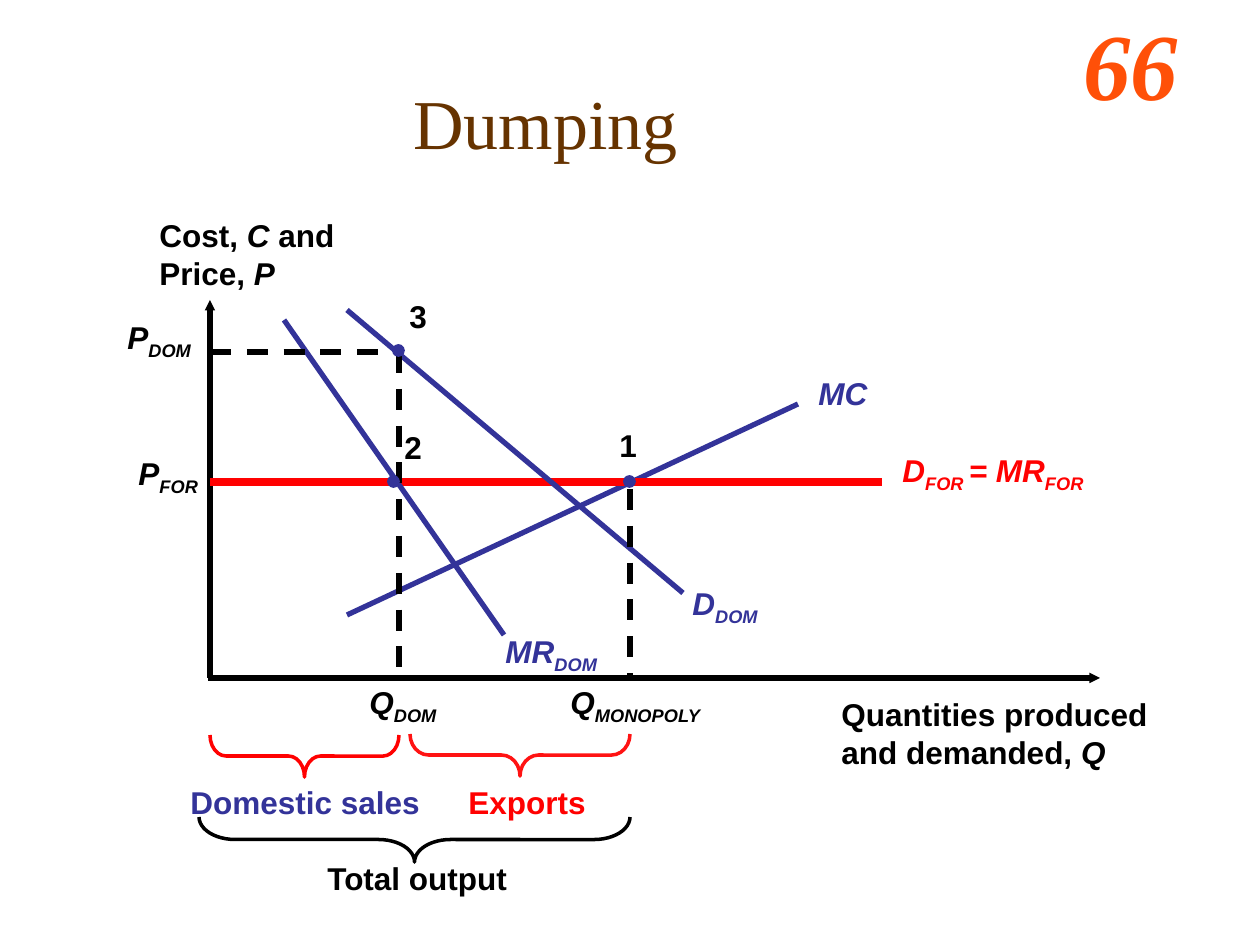
"""Builds a slide with the price and cost diagram that explains dumping."""
from pptx import Presentation
from pptx.dml.color import RGBColor
from pptx.enum.dml import MSO_LINE
from pptx.enum.shapes import MSO_CONNECTOR, MSO_SHAPE
from pptx.enum.text import MSO_ANCHOR, PP_ALIGN
from pptx.oxml.ns import qn
from pptx.util import Pt
from lxml.etree import SubElement

PX = 914400 / 126
BLACK, BLUE, RED = "000000", "333399", "FF0101"


def paint(part, color):
    part.solid()
    part.fore_color.rgb = RGBColor.from_string(color)


def write(text, left, top, width, height, color, size=18, face="Arial", bold=True):
    box = slide.shapes.add_textbox(*[round(n * PX) for n in (left, top, width, height)])
    frame = box.text_frame
    frame.word_wrap = True
    for row, line in enumerate(text.split("\n")):
        para = frame.add_paragraph() if row else frame.paragraphs[0]
        para.font.name, para.font.size, para.font.bold = face, Pt(size), bold
        paint(para.font.fill, color)
        for i, part in enumerate(line.split("*")):
            for j, bit in enumerate(part.split("_")):
                if bit:
                    run = para.add_run()
                    run.text = bit
                    if i % 2:
                        run.font.italic = True
                    if j % 2:
                        run.font._element.set("baseline", "-25000")
    return frame


deck = Presentation()
deck.slide_width, deck.slide_height = round(1260 * PX), round(945 * PX)
slide = deck.slides.add_slide(deck.slide_layouts[6])

write("*66*", 1071, 0, 179, 126, "FF5008", 54, "Times New Roman")
title = write("Dumping", 10, 42, 1071, 158, "663300", 40, "Times New Roman", False)
title.vertical_anchor = MSO_ANCHOR.MIDDLE
title.paragraphs[0].alignment = PP_ALIGN.CENTER

for start, end, top, deep, curve, color in [
    (410, 630, 734, 42, 0.44, "FF1313"),
    (210, 399, 735, 42, 0.38, RED),
    (199, 630, 817, 45, 0.8, BLACK),
]:
    span = end - start
    spot = ((start + end - deep) / 2, top + (deep - span) / 2, deep, span)
    brace = slide.shapes.add_shape(MSO_SHAPE.RIGHT_BRACE, *[round(n * PX) for n in spot])
    brace.rotation = 90
    brace.adjustments[0], brace.adjustments[1] = curve, 0.5
    brace.shadow.inherit = False
    brace.fill.background()
    paint(brace.line.fill, color)
    brace.line.width = Pt(2)

for x1, y1, x2, y2, color, width, style in [
    (210, 678, 210, 300, BLACK, 3, "arrow"),
    (208, 678, 1100, 678, BLACK, 3, "arrow"),
    (347, 615, 798, 404, BLUE, 3, "plain"),
    (210, 482, 882, 482, RED, 4.5, "plain"),
    (284, 320, 504, 635, BLUE, 3, "plain"),
    (347, 310, 683, 593, BLUE, 3, "plain"),
    (210, 352, 399, 352, BLACK, 3, "dash"),
    (399, 352, 399, 680, BLACK, 3, "dash"),
    (630, 489, 630, 678, BLACK, 3, "dash"),
]:
    ends = [round(n * PX) for n in (x1, y1, x2, y2)]
    line = slide.shapes.add_connector(MSO_CONNECTOR.STRAIGHT, *ends)
    paint(line.line.fill, color)
    line.line.width = Pt(width)
    if style == "dash":
        line.line.dash_style = MSO_LINE.DASH
    if style == "arrow":
        SubElement(line.line._get_or_add_ln(), qn("a:tailEnd"), type="triangle", w="sm", len="sm")
    SubElement(line._element.spPr, qn("a:effectLst"))

for left, top in [(388, 476), (624, 476), (393, 345)]:
    dot = slide.shapes.add_shape(MSO_SHAPE.OVAL, *[round(n * PX) for n in (left, top, 11, 11)])
    dot.shadow.inherit = False
    paint(dot.fill, BLUE)
    paint(dot.line.fill, BLUE)
    dot.line.width = Pt(1)

for text, left, top, width, color in [
    ("Exports", 456, 777, 144, RED),
    ("Domestic sales", 178, 777, 256, BLUE),
    ("Cost, *C* and\nPrice, *P*", 147, 210, 202, BLACK),
    ("Quantities produced\nand demanded, *Q*", 829, 689, 333, BLACK),
    ("*MC*", 806, 368, 86, BLUE),
    ("*D_FOR _= MR_FOR_*", 890, 445, 286, RED),
    ("*MR_DOM_*", 493, 626, 158, BLUE),
    ("*D_DOM_*", 680, 578, 99, BLUE),
    ("*P_FOR_*", 126, 448, 92, BLACK),
    ("*P_DOM_*", 115, 312, 102, BLACK),
    ("*Q_DOM_*", 357, 677, 126, BLACK),
    ("*Q_MONOPOLY_*", 558, 677, 198, BLACK),
    ("Total output", 315, 853, 209, BLACK),
    ("1", 607, 420, 44, BLACK),
    ("2", 392, 422, 44, BLACK),
    ("3", 397, 291, 44, BLACK),
]:
    write(text, left, top, width, 88 if "\n" in text else 50, color)

deck.save("out.pptx")
